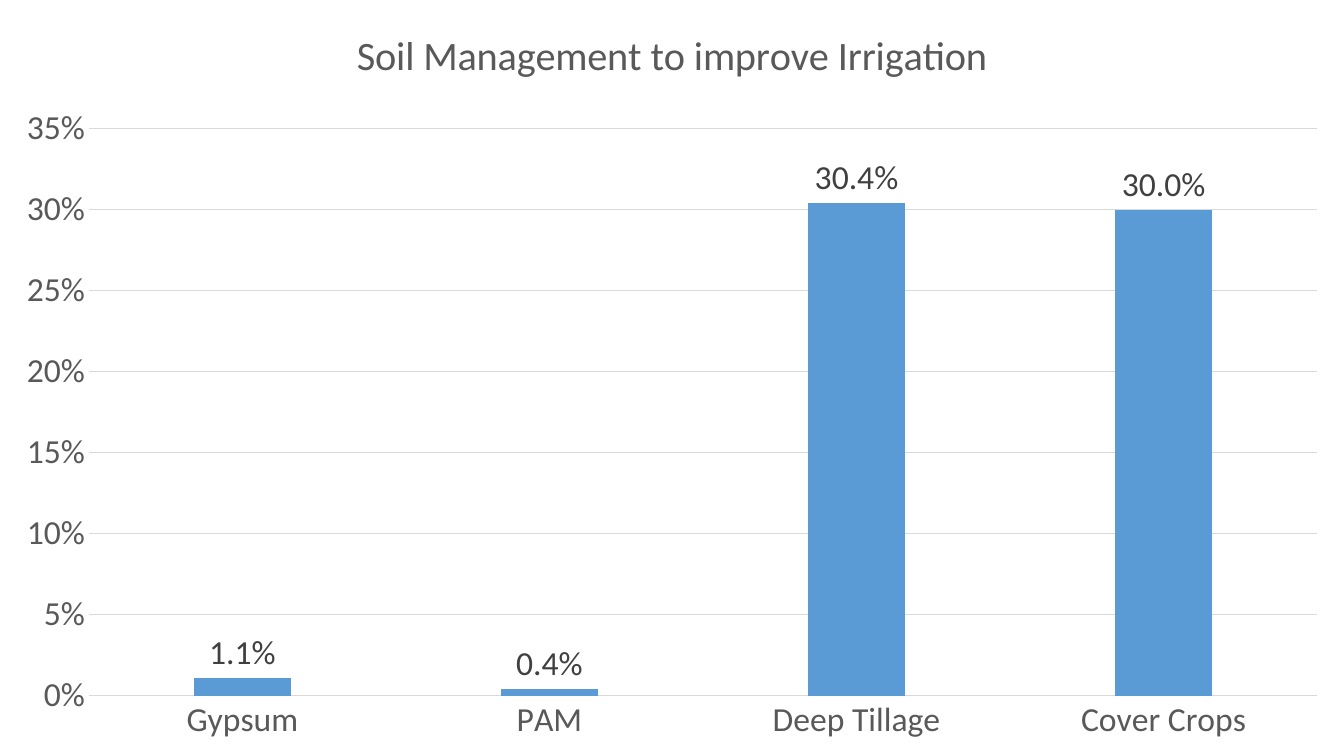
from pptx import Presentation
from pptx.chart.data import CategoryChartData
from pptx.dml.color import RGBColor
from pptx.enum.chart import XL_CHART_TYPE, XL_LABEL_POSITION, XL_TICK_MARK
from pptx.util import Inches, Pt

BLANK_LAYOUT = 6


def rgb(hex_color):
    return RGBColor.from_string(hex_color)


class ChartSlide:
    FONT = "Calibri"
    TEXT = "595959"
    LABEL = "404040"
    GRID = "D9D9D9"
    BAR = "5B9BD5"

    def __init__(self, prs):
        self.s = prs.slides.add_slide(prs.slide_layouts[BLANK_LAYOUT])

    def set_font(self, font, size, color):
        font.name = self.FONT
        font.size = Pt(size)
        font.bold = False
        font.color.rgb = rgb(color)

    def set_line(self, line):
        line.color.rgb = rgb(self.GRID)
        line.width = Pt(0.75)

    def column_chart(self, shares, left, top, width, height):
        data = CategoryChartData(number_format="0.0%")
        data.categories = list(shares)
        data.add_series("Series 1", list(shares.values()))
        chart = self.s.shapes.add_chart(
            XL_CHART_TYPE.COLUMN_CLUSTERED,
            Inches(left), Inches(top), Inches(width), Inches(height), data,
        ).chart
        self.set_font(chart.font, 24, self.TEXT)
        chart.has_legend = False

        plot = chart.plots[0]
        plot.gap_width = 219
        plot.overlap = -27
        plot.vary_by_categories = False
        fill = plot.series[0].format.fill
        fill.solid()
        fill.fore_color.rgb = rgb(self.BAR)
        return chart

    def chart_title(self, chart, text):
        chart.has_title = True
        chart.chart_title.include_in_layout = False
        p = chart.chart_title.text_frame.paragraphs[0]
        r = p.add_run()
        r.text = text
        self.set_font(r.font, 28.8, self.TEXT)

    def data_labels(self, chart):
        labels = chart.plots[0].series[0].data_labels
        labels.show_value = True
        labels.number_format = "0.0%"
        labels.number_format_is_linked = False
        labels.position = XL_LABEL_POSITION.OUTSIDE_END
        self.set_font(labels.font, 24, self.LABEL)

    def axes(self, chart, top_share, step):
        for axis in (chart.category_axis, chart.value_axis):
            axis.major_tick_mark = XL_TICK_MARK.NONE
            axis.minor_tick_mark = XL_TICK_MARK.NONE
            self.set_font(axis.tick_labels.font, 24, self.TEXT)
        self.set_line(chart.category_axis.format.line)

        values = chart.value_axis
        values.minimum_scale = 0
        values.maximum_scale = top_share
        values.major_unit = step
        values.tick_labels.number_format = "0%"
        values.tick_labels.number_format_is_linked = False
        values.format.line.fill.background()
        values.has_major_gridlines = True
        self.set_line(values.major_gridlines.format.line)


def main():
    prs = Presentation()
    prs.slide_width = Inches(13.33)
    prs.slide_height = Inches(7.5)

    slide = ChartSlide(prs)
    shares = {"Gypsum": 0.011, "PAM": 0.004, "Deep Tillage": 0.304, "Cover Crops": 0.3}
    chart = slide.column_chart(shares, 0, 0, 13.33, 7.5)
    slide.chart_title(chart, "Soil Management to improve Irrigation")
    slide.data_labels(chart)
    slide.axes(chart, top_share=0.35, step=0.05)

    prs.save("out.pptx")


if __name__ == "__main__":
    main()
